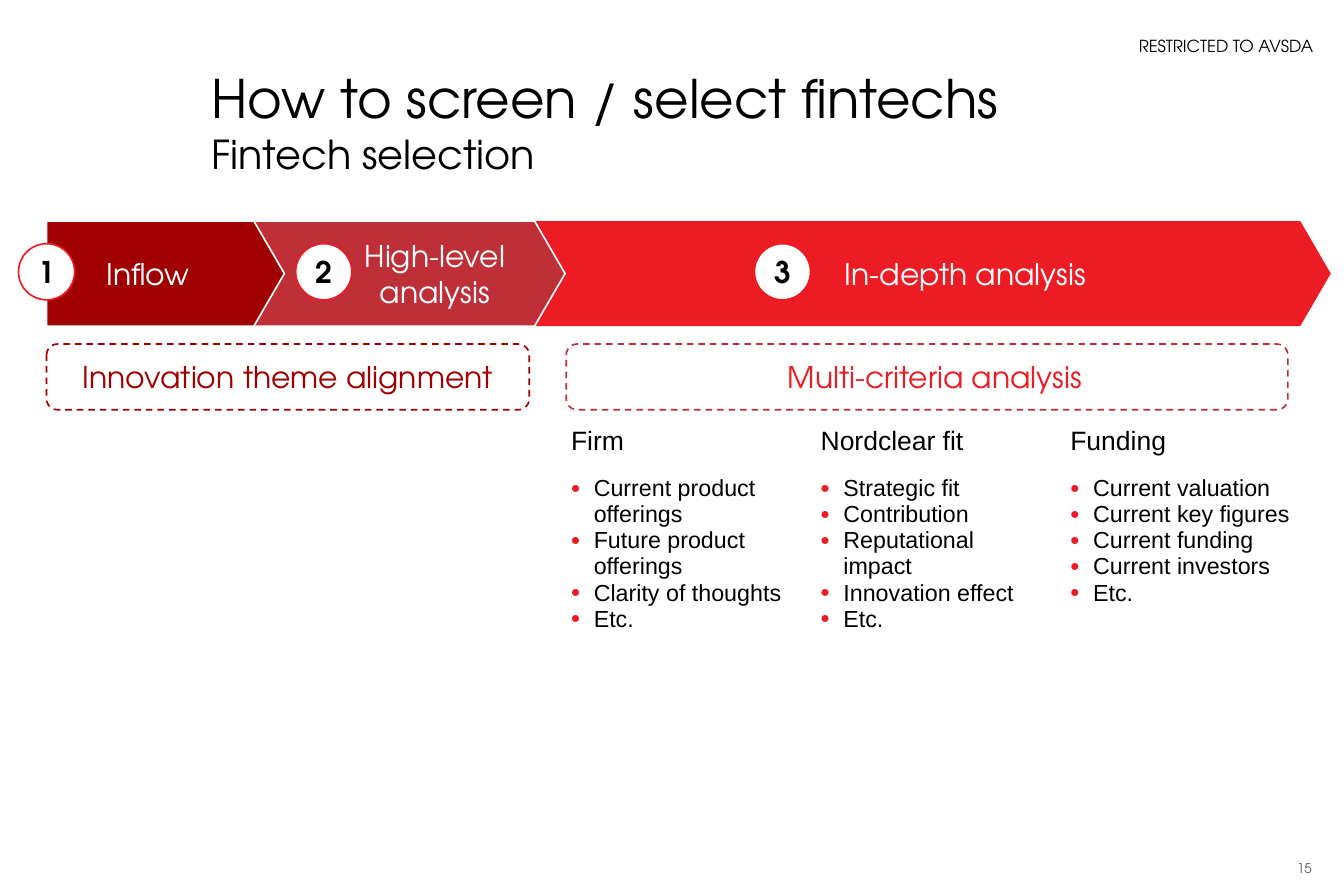
from lxml.etree import SubElement
from pptx import Presentation
from pptx.dml.color import RGBColor
from pptx.enum.dml import MSO_LINE
from pptx.enum.shapes import MSO_SHAPE
from pptx.enum.text import MSO_ANCHOR, PP_ALIGN
from pptx.oxml.ns import qn
from pptx.util import Inches, Pt

BLACK = RGBColor(0x00, 0x00, 0x00)
WHITE = RGBColor(0xFF, 0xFF, 0xFF)
GREY = RGBColor(0x55, 0x55, 0x55)
DARK_RED = RGBColor(0xA0, 0x00, 0x00)
MID_RED = RGBColor(0xBF, 0x2F, 0x38)
RED = RGBColor(0xED, 0x1C, 0x24)
HEADING_FONT = "TeX Gyre Adventor"
BODY_FONT = "Arial"

TITLE = [("How to screen / select fintechs", 32), ("Fintech selection", 24)]
MARKING = "RESTRICTED TO AVSDA"
PAGE = "15"

# left, width, fill, outline, label lines, label centre, circle centre
STEPS = [
    (0.39, 1.99, DARK_RED, WHITE, ["Inflow"], 1.24, 0.39),
    (2.08, 2.65, MID_RED, WHITE, ["High-level", "analysis"], 3.64, 2.71),
    (4.48, 6.66, RED, None, ["In-depth analysis"], 8.08, 6.55),
]
# left, width, outline, text colour, text, left inset
CRITERIA = [
    (0.39, 4.04, DARK_RED, DARK_RED, "Innovation theme alignment", 0),
    (4.74, 6.04, MID_RED, RED, "Multi-criteria analysis", 0.13),
]
TOPICS = {
    "Firm": ["Current product offerings", "Future product offerings",
             "Clarity of thoughts", "Etc."],
    "Nordclear fit": ["Strategic fit", "Contribution", "Reputational impact",
                      "Innovation effect", "Etc."],
    "Funding": ["Current valuation", "Current key figures", "Current funding",
                "Current investors", "Etc."],
}

ARROW_TOP, ARROW_HEIGHT = 1.85, 0.88
CIRCLE_TOP, CIRCLE_SIZE = 2.04, 0.47
CRITERIA_TOP, CRITERIA_HEIGHT = 2.88, 0.55
LABEL_WIDTH = 3.15
TABLE_LEFT, TABLE_TOP, COLUMN_WIDTH = 4.68, 3.52, 2.09
ROW_HEIGHTS = [0.41, 1.37]
INDENT = 0.19


def add_run(paragraph, text, size, color, font=HEADING_FONT, bold=False):
    run = paragraph.add_run()
    run.text = text
    run.font.size = Pt(size)
    run.font.name = font
    run.font.bold = bold
    run.font.color.rgb = color


def write(shape, lines, color, align=PP_ALIGN.CENTER, anchor=MSO_ANCHOR.MIDDLE,
          bold=False, inset=0):
    frame = shape.text_frame
    frame.word_wrap = True
    frame.vertical_anchor = anchor
    frame.margin_left = Inches(inset)
    frame.margin_right = frame.margin_top = frame.margin_bottom = 0
    paragraph = frame.paragraphs[0]
    paragraph.alignment = align
    for index, (text, size) in enumerate(lines):
        if index:
            paragraph.add_line_break()
        add_run(paragraph, text, size, color, bold=bold)


def add_box(left, top, width, height):
    return slide.shapes.add_textbox(Inches(left), Inches(top), Inches(width), Inches(height))


def add_shape(kind, left, top, width, height, fill, outline):
    shape = slide.shapes.add_shape(kind, Inches(left), Inches(top), Inches(width), Inches(height))
    shape.shadow.inherit = False
    shape.fill.solid()
    shape.fill.fore_color.rgb = fill
    if outline is None:
        shape.line.fill.background()
    else:
        shape.line.color.rgb = outline
        shape.line.width = Pt(1)
    return shape


def add_bullet(paragraph):
    properties = paragraph._p.get_or_add_pPr()
    properties.set("marL", str(Inches(INDENT)))
    properties.set("indent", str(-Inches(INDENT)))
    color = SubElement(properties, qn("a:buClr"))
    SubElement(color, qn("a:srgbClr"), val=str(RED))
    SubElement(properties, qn("a:buSzPct"), val="111000")
    SubElement(properties, qn("a:buFont"), typeface=BODY_FONT)
    SubElement(properties, qn("a:buChar"), char="•")


presentation = Presentation()
presentation.slide_width = Inches(11.25)
presentation.slide_height = Inches(7.5)
slide = presentation.slides.add_slide(presentation.slide_layouts[6])

write(add_box(3.46, 0.13, 7.53, 0.34), [(MARKING, 10)], BLACK, PP_ALIGN.RIGHT, MSO_ANCHOR.BOTTOM)
write(add_box(1.77, 0.55, 7.97, 0.79), TITLE, BLACK, PP_ALIGN.LEFT, MSO_ANCHOR.TOP)
write(add_box(10.56, 7.14, 0.42, 0.19), [(PAGE, 8)], GREY, PP_ALIGN.RIGHT, MSO_ANCHOR.BOTTOM)

for left, width, outline, color, text, inset in CRITERIA:
    box = add_shape(MSO_SHAPE.ROUNDED_RECTANGLE, left, CRITERIA_TOP, width, CRITERIA_HEIGHT,
                    WHITE, outline)
    box.line.dash_style = MSO_LINE.DASH
    write(box, [(text, 18)], color, inset=inset)

for left, width, fill, outline, *_ in reversed(STEPS):
    arrow = add_shape(MSO_SHAPE.PENTAGON, left, ARROW_TOP, width, ARROW_HEIGHT, fill, outline)
    arrow.adjustments[0] = 0.29

for number, (*_, lines, label_centre, circle_centre) in enumerate(STEPS, 1):
    label = add_box(label_centre - LABEL_WIDTH / 2, ARROW_TOP, LABEL_WIDTH, ARROW_HEIGHT)
    write(label, [(line, 18) for line in lines], WHITE)
    circle = add_shape(MSO_SHAPE.OVAL, circle_centre - CIRCLE_SIZE / 2, CIRCLE_TOP,
                       CIRCLE_SIZE, CIRCLE_SIZE, WHITE, RED)
    write(circle, [(str(number), 18)], BLACK, bold=True)

table = slide.shapes.add_table(
    len(ROW_HEIGHTS), len(TOPICS), Inches(TABLE_LEFT), Inches(TABLE_TOP),
    Inches(COLUMN_WIDTH * len(TOPICS)), Inches(sum(ROW_HEIGHTS))).table
table.first_row = False
table.horz_banding = False
for row, height in zip(table.rows, ROW_HEIGHTS):
    row.height = Inches(height)
for index, (topic, points) in enumerate(TOPICS.items()):
    table.columns[index].width = Inches(COLUMN_WIDTH)
    heading, body = table.cell(0, index), table.cell(1, index)
    heading.fill.background()
    body.fill.background()
    add_run(heading.text_frame.paragraphs[0], topic, 16, BLACK, BODY_FONT)
    for position, point in enumerate(points):
        frame = body.text_frame
        paragraph = frame.add_paragraph() if position else frame.paragraphs[0]
        add_bullet(paragraph)
        add_run(paragraph, point, 14, BLACK, BODY_FONT)

presentation.save("out.pptx")
